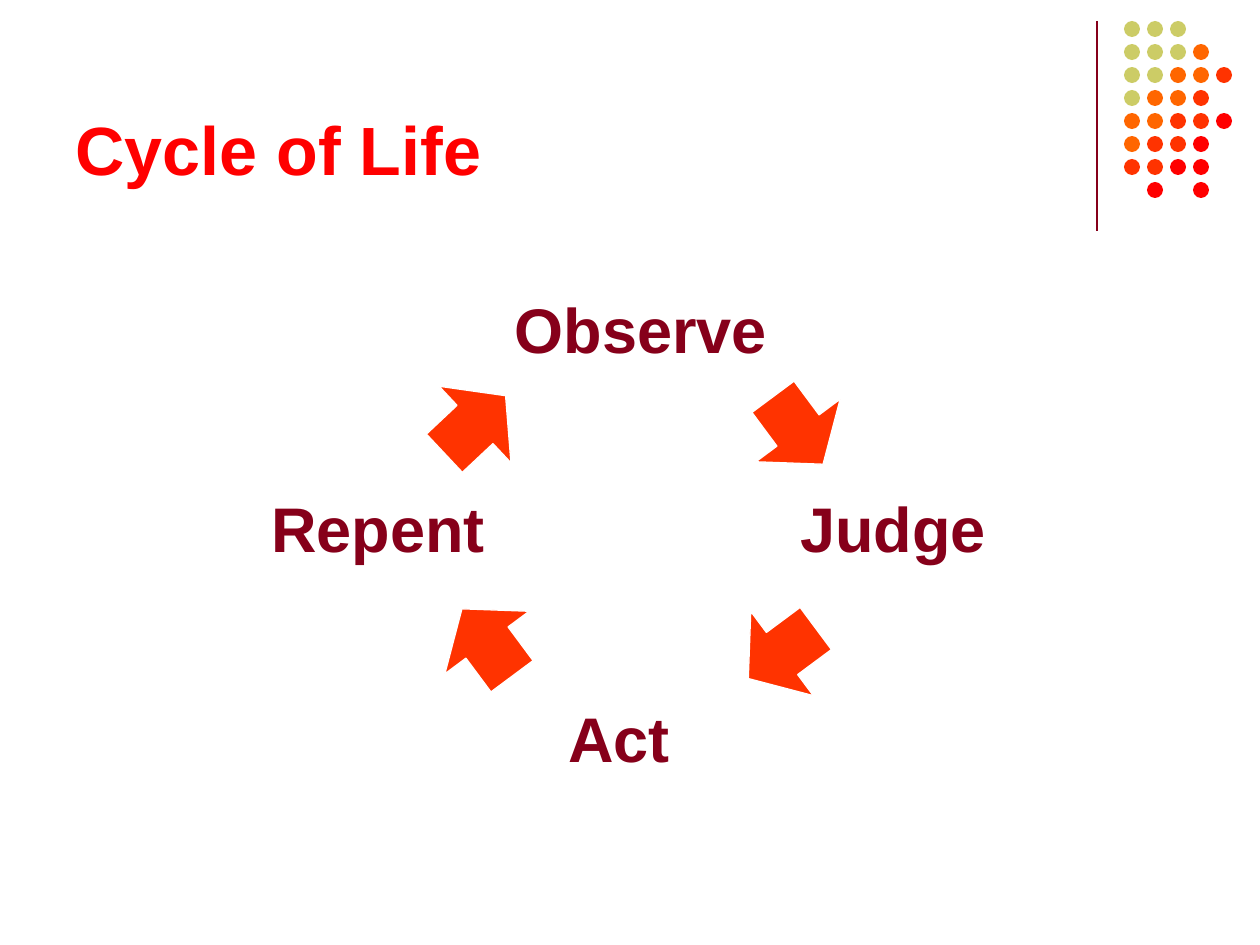
import pptx
import pptx.util
import pptx.dml.color
import pptx.enum.shapes
import pptx.enum.text
import pptx.oxml.ns
import lxml.etree

EMU_PER_PX = 914400 / 126
FONT = "Arial"
MAROON, RED, ORANGE_RED = "86001A", "FF0000", "FF3300"

# Dot grid: one letter per dot, a full stop leaves the place empty
DOT_COLOURS = {"G": "CCCC66", "O": "FF6600", "D": ORANGE_RED, "R": RED}
DOT_ROWS = ["GGG", "GGGO", "GGOOD", "GOOD", "OODDR", "ODDR", "DDRR", ".R.R"]
DOT_LEFT, DOT_TOP, DOT_PITCH, DOT_SIZE = 1124, 21, 23, 16

# Label: text, left, top
STEPS = [("Observe", 473, 284), ("Judge", 725, 483),
         ("Act", 451, 693), ("Repent", 210, 483)]
# Arrow: left, top, rotation in degrees
ARROWS = [(756, 378, 53.4), (445, 590, 233.4),
          (740, 601, 143.4), (433, 372, 316.8)]


def px(length):
    return pptx.util.Emu(round(length * EMU_PER_PX))


def box(*lengths):
    return [px(length) for length in lengths]


def colour(hex_string):
    return pptx.dml.color.RGBColor.from_string(hex_string)


def set_text(shape, text, size, hex_string, alignment):
    text_frame = shape.text_frame
    text_frame.text = text
    text_frame.word_wrap = True
    paragraph = text_frame.paragraphs[0]
    paragraph.alignment = alignment
    font = paragraph.runs[0].font
    font.name, font.size, font.bold = FONT, pptx.util.Pt(size), True
    font.color.rgb = colour(hex_string)


def add_title(slide, text):
    title = slide.shapes.title
    title.left, title.top, title.width, title.height = box(63, 16, 1040, 179)
    set_text(title, text, 39, RED, pptx.enum.text.PP_ALIGN.LEFT)
    title.text_frame.vertical_anchor = pptx.enum.text.MSO_ANCHOR.BOTTOM


def add_label(slide, text, left, top):
    label = slide.shapes.add_textbox(*box(left, top, 336, 89))
    set_text(label, text, 36, MAROON, pptx.enum.text.PP_ALIGN.CENTER)
    label.text_frame.auto_size = pptx.enum.text.MSO_AUTO_SIZE.SHAPE_TO_FIT_TEXT


def add_filled_shape(shapes, kind, position, hex_string):
    shape = shapes.add_shape(kind, *box(*position))
    shape.shadow.inherit = False
    shape.fill.solid()
    shape.fill.fore_color.rgb = colour(hex_string)
    shape.line.fill.background()
    return shape


def add_arrow(slide, left, top, rotation):
    arrow = add_filled_shape(
        slide.shapes, pptx.enum.shapes.MSO_SHAPE.RIGHT_ARROW,
        (left, top, 84, 105), ORANGE_RED)
    arrow.rotation = rotation
    arrow.line.color.rgb = colour("FFFFFF")
    arrow.line.width = pptx.util.Pt(0.75)


def add_rule(slide):
    rule = slide.shapes.add_connector(
        pptx.enum.shapes.MSO_CONNECTOR.STRAIGHT, *box(1097, 21, 1097, 231))
    rule.line.color.rgb = colour(MAROON)
    rule.line.width = pptx.util.Pt(0.75)
    lxml.etree.SubElement(rule._element.spPr, pptx.oxml.ns.qn("a:effectLst"))


def add_dots(slide):
    group = slide.shapes.add_group_shape()
    for row, letters in enumerate(DOT_ROWS):
        for column, letter in enumerate(letters):
            if letter in DOT_COLOURS:
                position = (DOT_LEFT + column * DOT_PITCH,
                            DOT_TOP + row * DOT_PITCH, DOT_SIZE, DOT_SIZE)
                add_filled_shape(group.shapes, pptx.enum.shapes.MSO_SHAPE.OVAL,
                                 position, DOT_COLOURS[letter])


def main():
    presentation = pptx.Presentation()
    presentation.slide_width, presentation.slide_height = box(1260, 945)
    slide = presentation.slides.add_slide(presentation.slide_layouts[5])

    # Corner decoration
    add_rule(slide)
    add_dots(slide)

    # Title and cycle
    add_title(slide, "Cycle of Life")
    for step in STEPS:
        add_label(slide, *step)
    for arrow in ARROWS:
        add_arrow(slide, *arrow)

    presentation.save("out.pptx")


if __name__ == "__main__":
    main()
